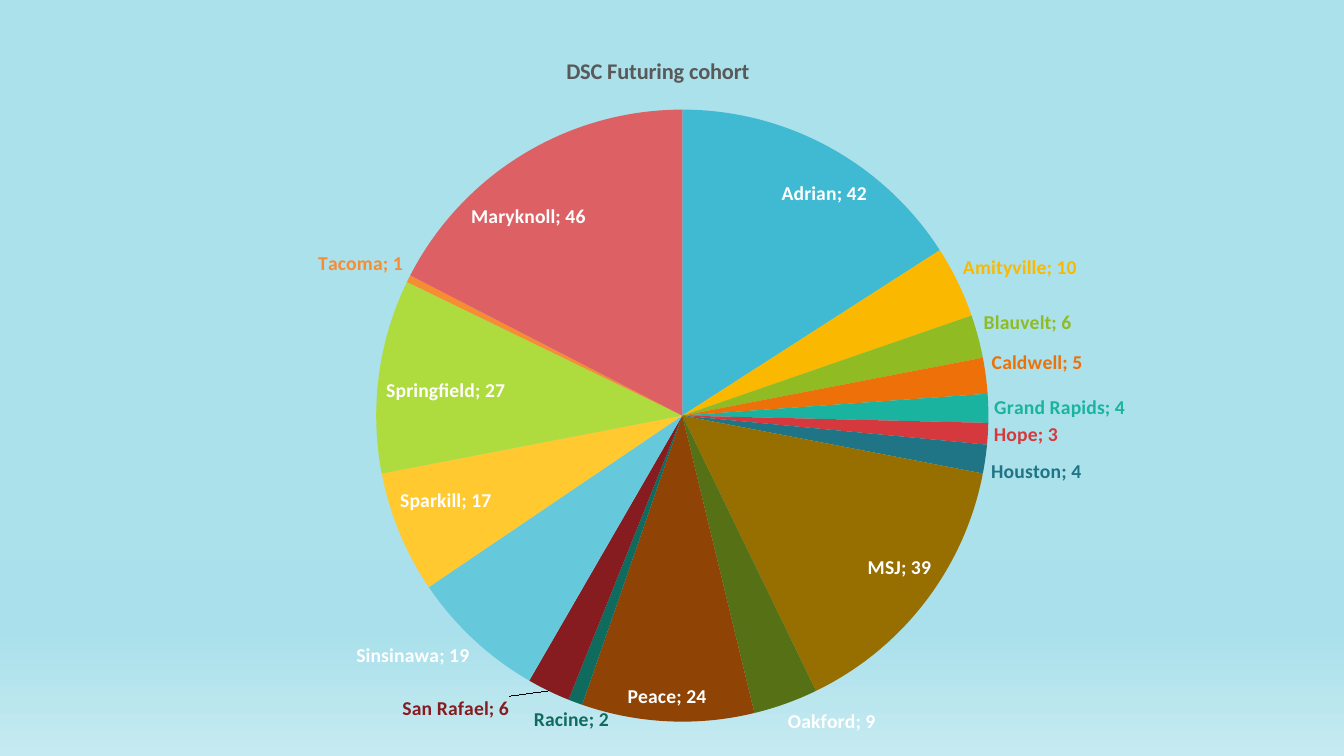
from lxml import etree
from pptx import Presentation
from pptx.chart.data import CategoryChartData
from pptx.dml.color import RGBColor
from pptx.enum.chart import XL_CHART_TYPE, XL_LABEL_POSITION
from pptx.oxml.ns import qn
from pptx.util import Inches, Pt

PIE = XL_CHART_TYPE.PIE
BEST_FIT = XL_LABEL_POSITION.BEST_FIT
FONT = "Calibri"
WIDTH, HEIGHT = Inches(13.33), Inches(7.5)
COLORS = {"title": "595959", "inside": "FFFFFF", "text": "000000"}
SKY = [(0, "ABE1EB"), (74, "A9E0EB"), (83, "A9E0EB"), (100, "C6EAF1")]

# name, members, slice colour
COHORT = [
    ("Adrian", 42, "40BAD2"), ("Amityville", 10, "FAB900"),
    ("Blauvelt", 6, "90BB23"), ("Caldwell", 5, "EE7008"),
    ("Grand Rapids", 4, "1AB39F"), ("Hope", 3, "D5393D"),
    ("Houston", 4, "1F7485"), ("MSJ", 39, "966F00"),
    ("Oakford", 9, "567015"), ("Peace", 24, "8F4305"),
    ("Racine", 2, "106B5F"), ("San Rafael", 6, "861C1F"),
    ("Sinsinawa", 19, "66C8DB"), ("Sparkill", 17, "FFC92F"),
    ("Springfield", 27, "AEDB3D"), ("Tacoma", 1, "F88C33"),
    ("Maryknoll", 46, "DD6164"),
]
WHITE_LABELS = {"Adrian", "MSJ", "Oakford", "Peace", "Sinsinawa", "Sparkill",
                "Springfield", "Maryknoll"}
LABEL_SHIFTS = {"San Rafael": {"x": -0.03, "y": 0}}


def add_sub(parent, tag, **attrs):
    return etree.SubElement(parent, qn(tag), attrs)


def manual_layout(**values):
    layout = etree.Element(qn("c:layout"))
    manual = add_sub(layout, "c:manualLayout")
    for name, val in values.items():
        add_sub(manual, f"c:{name}", val=str(val))
    return layout


def style_font(font, size, color, bold=False):
    font.name, font.size, font.bold = FONT, Pt(size), bold
    font.color.rgb = RGBColor.from_string(color)


def paint_background(slide, stops):
    fill = slide.background.fill
    fill.gradient()
    fill.gradient_angle = 270
    gs_lst = next(slide.element.iter(qn("a:gsLst")))
    for gs in list(gs_lst):
        gs_lst.remove(gs)
    for percent, color in stops:
        gs = add_sub(gs_lst, "a:gs", pos=str(percent * 1000))
        add_sub(gs, "a:srgbClr", val=color)


def add_pie(slide, title):
    data = CategoryChartData()
    data.categories = [name for name, _, _ in COHORT]
    data.add_series("Series 1", [members for _, members, _ in COHORT])
    chart = slide.shapes.add_chart(PIE, Inches(0.45), Inches(0.32),
                                   Inches(12.15), Inches(6.98), data).chart
    style_font(chart.font, 10, COLORS["text"])
    chart.has_legend = False
    chart.has_title = True
    p = chart.chart_title.text_frame.paragraphs[0]
    p.text = title
    style_font(p.font, 16, COLORS["title"], bold=True)
    chart.plots[0].vary_by_categories = True

    plot_area = next(chart.element.iter(qn("c:plotArea")))
    for old in plot_area.findall(qn("c:layout")):
        plot_area.remove(old)
    plot_area.insert(0, manual_layout(
        layoutTarget="inner", xMode="edge", yMode="edge",
        x=0.04, y=0.11, w=0.96, h=0.87))
    return chart


def color_slices(series):
    for i, (name, _, color) in enumerate(COHORT):
        point = series.points[i]
        point.format.fill.solid()
        point.format.fill.fore_color.rgb = RGBColor.from_string(color)
        point.format.line.fill.background()
        label = point.data_label
        shade = COLORS["inside"] if name in WHITE_LABELS else color
        style_font(label.font, 14, shade, bold=True)
        label.position = BEST_FIT


def finish_labels(series):
    """Show name and value on each slice and shift the crowded labels."""
    labels = series.data_labels
    style_font(labels.font, 14, COHORT[0][2], bold=True)
    labels.show_category_name = labels.show_value = True
    labels.position = BEST_FIT
    for d_lbl, (name, _, _) in zip(
            series._element.iter(qn("c:dLbl")), COHORT):
        d_lbl.find(qn("c:showCatName")).set("val", "1")
        add_sub(d_lbl, "c:separator").text = "; "
        if name in LABEL_SHIFTS:
            d_lbl.insert(1, manual_layout(**LABEL_SHIFTS[name]))


def main():
    prs = Presentation()
    prs.slide_width, prs.slide_height = WIDTH, HEIGHT
    slide = prs.slides.add_slide(prs.slide_layouts[6])
    paint_background(slide, SKY)
    chart = add_pie(slide, "DSC Futuring cohort")
    series = chart.plots[0].series[0]
    color_slices(series)
    finish_labels(series)
    prs.save("out.pptx")


if __name__ == "__main__":
    main()
